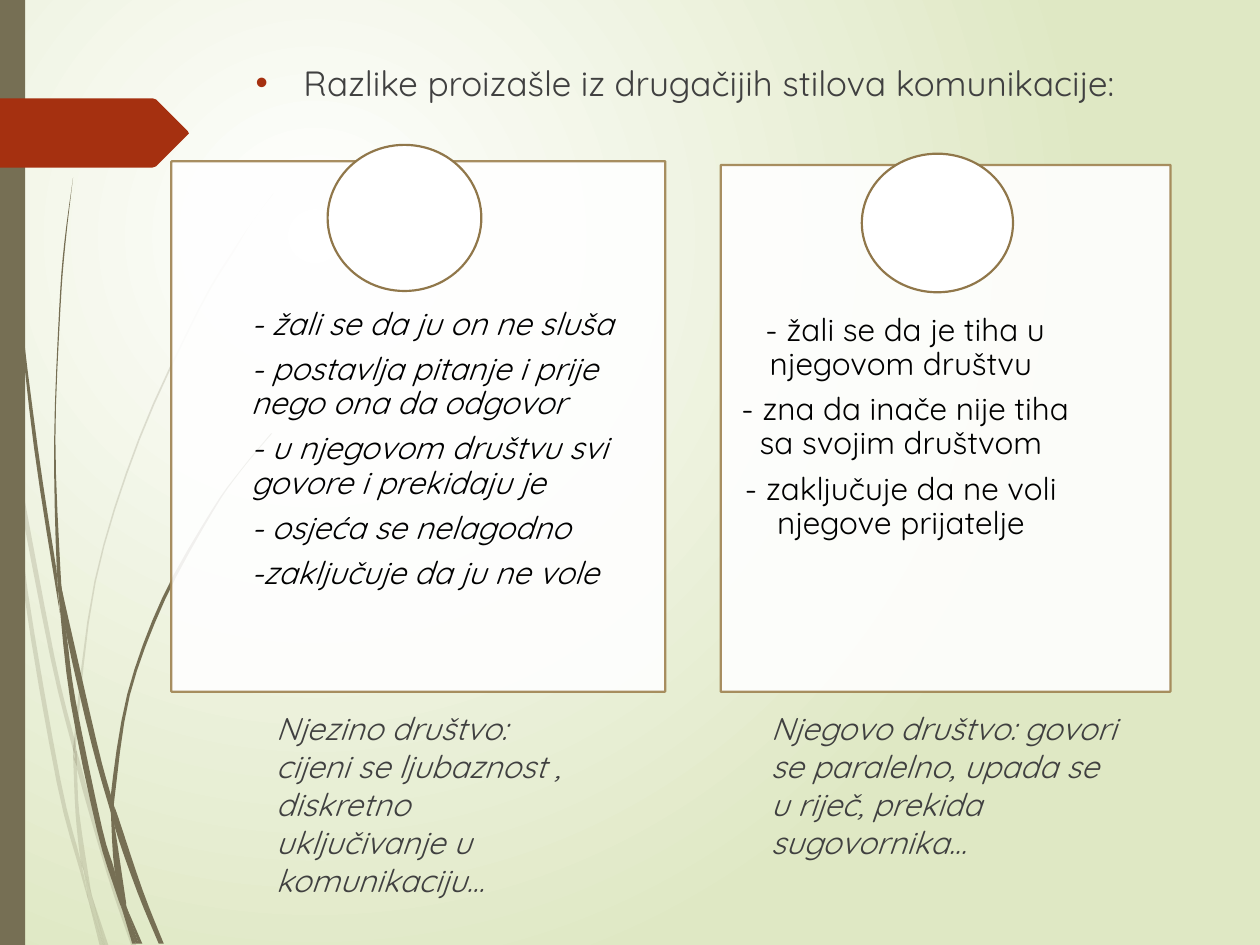
"""Build a slide that contrasts her and his complaints about communication styles."""
from dataclasses import dataclass
from typing import Optional

from lxml.etree import SubElement
from pptx import Presentation
from pptx.dml.color import RGBColor
from pptx.enum.shapes import MSO_SHAPE as Preset
from pptx.enum.text import MSO_ANCHOR as Anchor, MSO_AUTO_SIZE as AutoSize, PP_ALIGN as Align
from pptx.oxml import parse_xml
from pptx.oxml.ns import nsdecls, qn
from pptx.util import Inches, Pt

COLORS = {
    "white": "FFFFFF", "pale": "DFE8C4", "olive": "766F54", "red": "A53010",
    "frame": "9F8351", "ring": "90774A", "grey": "404040", "black": "000000",
}
FONT = "Quicksand"
STEPS = 4
Point = tuple[float, float]
Edge = list[Point]
Box = tuple[float, float, float, float]


@dataclass
class Wisp:
    """A blade of grass between two smooth edges, listed as one closed round."""
    outward: Edge
    back: Edge


@dataclass
class Card:
    """A framed list of complaints with a ring on its top side."""
    frame: Box
    ring: Box
    words: Box
    top_inset: float
    align: Align
    italic: bool
    complaints: list[str]


PALE_WISPS = [
    Wisp([(0.08, 3.5), (0.06, 3.22), (0, 2.82)], [(0, 2.99), (0.07, 3.44), (0.08, 3.5)]),
    Wisp([(0.1, 3.45), (0.12, 3.76), (0.4, 5.22), (0.59, 5.99)],
         [(0.59, 5.86), (0.43, 5.2), (0.1, 3.45)]),
    Wisp([(0.61, 5.96), (0.61, 6.1), (0.85, 6.94), (1.04, 7.5)],
         [(1.08, 7.5), (0.88, 6.92), (0.64, 6.07), (0.61, 5.96)]),
    Wisp([(0.83, 7.5), (0.86, 7.5)], [(0.73, 7.11), (0.83, 7.5)]),
    Wisp([(0.7, 7.14), (0.64, 6.83), (0.48, 6.19), (0.22, 4.69), (0.12, 3.76), (0.08, 3.5)],
         [(0.08, 3.5), (0.19, 4.7), (0.45, 6.21), (0.64, 6.93), (0.7, 7.14)]),
    Wisp([(0.58, 5.99), (0.6, 6.46), (0.64, 6.83), (0.67, 6.92), (0.73, 7.11)],
         [(0.72, 7.06), (0.63, 6.46), (0.61, 6.1), (0.58, 5.99)]),
    Wisp([(0.61, 5.96), (0.61, 5.84), (0.76, 4.62), (1.11, 3.49), (1.59, 2.45), (1.87, 1.98),
          (2.01, 1.75), (2.17, 1.54)],
         [(2.17, 1.53), (2.01, 1.75), (1.86, 1.97), (1.58, 2.44), (1.1, 3.48), (0.75, 4.61),
          (0.59, 5.84), (0.61, 5.96)]),
    Wisp([(0.7, 7.14), (0.79, 7.5)], [(0.82, 7.5), (0.7, 7.14)]),
    Wisp([(0.61, 6.08), (0.61, 5.96)], [(0.59, 5.86), (0.58, 5.99), (0.61, 6.08)]),
    Wisp([(0.65, 6.83), (0.69, 7.07), (0.7, 7.14), (0.82, 7.5)],
         [(0.83, 7.5), (0.73, 7.11), (0.67, 6.92), (0.65, 6.83)]),
]
DARK_WISPS = [
    Wisp([(0.02, 0), (0.03, 0.48), (0.05, 1.1), (0.14, 2.33), (0.27, 3.55), (0.46, 4.77),
          (0.47, 4.81)],
         [(0.45, 4.53), (0.3, 3.55), (0.15, 2.32), (0.06, 1.09), (0.04, 0.48), (0.03, 0)]),
    Wisp([(0.5, 4.72), (0.53, 5.05), (0.73, 5.92), (0.88, 6.45)],
         [(0.88, 6.31), (0.77, 5.9), (0.5, 4.72)]),
    Wisp([(0.91, 6.41), (0.91, 6.56), (1.09, 7.08), (1.26, 7.49)],
         [(1.3, 7.49), (1.13, 7.06), (0.94, 6.49), (0.91, 6.41)]),
    Wisp([(0.97, 7.22), (0.91, 6.91), (0.81, 6.57), (0.6, 5.56), (0.53, 5.05), (0.47, 4.77)],
         [(0.47, 4.77), (0.56, 5.57), (0.77, 6.59), (0.92, 7.08), (0.97, 7.22)]),
    Wisp([(0.5, 4.72), (0.48, 4.53), (0.44, 3.49), (0.48, 2.45), (0.52, 1.93), (0.58, 1.41)],
         [(0.58, 1.41), (0.51, 1.93), (0.47, 2.45), (0.43, 3.49), (0.45, 4.49), (0.49, 4.72)]),
    Wisp([(1.1, 7.49), (1.13, 7.49)], [(1, 7.19), (1.1, 7.49)]),
    Wisp([(0.45, 4.49), (0.47, 4.77), (0.53, 5.05)], [(0.5, 4.72), (0.45, 4.49)]),
    Wisp([(0.91, 6.41), (0.91, 6.33), (1.03, 5.52), (1.31, 4.76), (1.69, 4.06), (1.91, 3.74),
          (2.16, 3.44)],
         [(2.15, 3.44), (1.91, 3.73), (1.68, 4.05), (1.29, 4.74), (1.01, 5.51), (0.88, 6.31),
          (0.91, 6.41)]),
    Wisp([(0.97, 7.22), (1.05, 7.49)], [(1.08, 7.49), (0.97, 7.22)]),
    Wisp([(0.88, 6.45), (0.91, 6.91), (1, 7.19)], [(1, 7.16), (0.91, 6.56), (0.88, 6.45)]),
    Wisp([(0.88, 6.31), (0.88, 6.45), (0.91, 6.56)], [(0.91, 6.41), (0.88, 6.31)]),
    Wisp([(0.91, 6.91), (0.97, 7.22), (1.08, 7.49)], [(1.1, 7.49), (0.96, 7.06), (0.91, 6.91)]),
]
PAGE_FLAG = [(0, 0.78), (1.21, 0.78), (1.24, 0.79), (1.49, 1.04), (1.5, 1.06), (1.49, 1.07),
             (1.24, 1.32), (1.21, 1.33), (0, 1.33)]
CARDS = [
    Card((1.36, 1.28, 3.92, 4.21), (2.6, 1.15, 1.22, 1.16), (1.99, 1.28, 3.29, 4.21), 0.51,
         Align.LEFT, True,
         ["- žali se da ju on ne sluša", "- postavlja pitanje i prije nego ona da odgovor",
          "- u njegovom društvu svi govore i prekidaju je", "- osjeća se nelagodno",
          "-zaključuje da ju ne vole"]),
    Card((5.72, 1.31, 3.57, 4.18), (6.84, 1.22, 1.2, 1.1), (5.72, 1.31, 3, 4.18), 0.13,
         Align.CENTER, False,
         [" - žali se da je tiha u njegovom društvu",
          " - zna da inače nije tiha sa svojim društvom",
          "- zaključuje da ne voli njegove prijatelje"]),
]


def rgb(name: str) -> RGBColor:
    """Look up a colour of the palette."""
    return RGBColor.from_string(COLORS[name])


def inches(box: Box) -> list[Inches]:
    """Turn a box into lengths."""
    return [Inches(value) for value in box]


def smooth(edge: Edge) -> Edge:
    """Sample a Catmull-Rom curve through the points of an edge."""
    padded = [edge[0], *edge, edge[-1]]
    curve = [edge[0]]
    for a, b, c, d in zip(padded, padded[1:], padded[2:], padded[3:]):
        for step in range(1, STEPS + 1):
            t = step / STEPS
            curve.append(tuple(
                q + t / 2 * (r - p + t * (2 * p - 5 * q + 4 * r - s + t * (3 * q - p - 3 * r + s)))
                for p, q, r, s in zip(a, b, c, d)))
    return curve


def paint(shape, fill: str, line: Optional[str] = None, alpha: int = 100) -> None:
    """Give a shape a flat fill, an optional outline and an opacity in percent."""
    shape.shadow.inherit = False
    shape.fill.solid()
    shape.fill.fore_color.rgb = rgb(fill)
    if line:
        shape.line.color.rgb = rgb(line)
        shape.line.width = Pt(1.25)
    else:
        shape.line.fill.background()
    if alpha < 100:
        for color in shape.element.spPr.iter(qn("a:srgbClr")):
            SubElement(color, qn("a:alpha"), val=str(alpha * 1000))


def draw_outline(shapes, points: Edge, fill: str, alpha: int = 100) -> None:
    """Draw a closed outline."""
    corners = [(Inches(x), Inches(y)) for x, y in points]
    builder = shapes.build_freeform(*corners[0])
    builder.add_line_segments(corners[1:], close=True)
    paint(builder.convert_to_shape(), fill, alpha=alpha)


def draw_wisps(shapes, wisps: list[Wisp], alpha: int) -> None:
    """Draw a tuft of grass."""
    for wisp in wisps:
        draw_outline(shapes, smooth(wisp.outward) + smooth(wisp.back), "olive", alpha)


def draw_preset(shapes, preset: Preset, box: Box, fill: str,
                line: Optional[str] = None, alpha: int = 100) -> None:
    """Draw a preset shape."""
    paint(shapes.add_shape(preset, *inches(box)), fill, line, alpha)


def write(shape, texts: list[str], size: int, color: str, italic: bool = False,
          align: Align = Align.LEFT, anchor: Anchor = Anchor.TOP):
    """Write paragraphs into a shape and return its text frame."""
    frame = shape.text_frame
    frame.word_wrap = True
    frame.auto_size = AutoSize.NONE
    frame.vertical_anchor = anchor
    for index, text in enumerate(texts):
        paragraph = frame.add_paragraph() if index else frame.paragraphs[0]
        paragraph.alignment = align
        run = paragraph.add_run()
        run.text = text
        run.font.name, run.font.size, run.font.italic = FONT, Pt(size), italic
        run.font.color.rgb = rgb(color)
    return frame


def draw_card(shapes, card: Card) -> None:
    """Draw a frame, its complaints and its ring."""
    draw_preset(shapes, Preset.RECTANGLE, card.frame, "white", "frame", 90)
    frame = write(shapes.add_textbox(*inches(card.words)), card.complaints, 18, "black",
                  card.italic, card.align, Anchor.MIDDLE)
    frame.margin_left, frame.margin_top = 0, Inches(card.top_inset)
    frame.margin_right = frame.margin_bottom = Inches(0.14)
    for paragraph in frame.paragraphs:
        paragraph.line_spacing, paragraph.space_after = 0.9, Pt(6.3)
    draw_preset(shapes, Preset.OVAL, card.ring, "white", "ring")


def draw_background(slide) -> None:
    """Fill the background with a circular gradient."""
    fill = slide.background.fill
    fill.gradient()
    for stop, name in zip(fill.gradient_stops, ("white", "pale")):
        stop.color.rgb = rgb(name)
    linear = next(slide.element.iter(qn("a:lin")))
    linear.getparent().replace(linear, parse_xml(
        f'<a:path {nsdecls("a")} path="circle">'
        '<a:fillToRect l="50000" t="50000" r="100000" b="100000"/></a:path>'))


def draw_heading(shapes) -> None:
    """Write the bulleted heading."""
    heading = shapes.add_textbox(*inches((1.93, 0.44, 7.21, 1.5)))
    frame = write(heading, ["Razlike proizašle iz drugačijih stilova komunikacije:"], 20, "grey")
    properties = frame.paragraphs[0]._p.get_or_add_pPr()
    properties.set("marL", str(Inches(0.38)))
    properties.set("indent", str(Inches(-0.38)))
    SubElement(SubElement(properties, qn("a:buClr")), qn("a:srgbClr"), val=COLORS["red"])
    SubElement(properties, qn("a:buFont"), typeface="Arial")
    SubElement(properties, qn("a:buChar"), char="•")


def main() -> None:
    """Assemble and save the slide."""
    deck = Presentation()
    deck.slide_width, deck.slide_height = Inches(10), Inches(7.5)
    slide = deck.slides.add_slide(deck.slide_layouts[5])
    shapes = slide.shapes
    draw_background(slide)
    draw_wisps(shapes, PALE_WISPS, 20)
    draw_wisps(shapes, DARK_WISPS, 100)
    draw_preset(shapes, Preset.RECTANGLE, (0, 0, 0.2, 7.5), "olive")
    draw_outline(shapes, PAGE_FLAG, "red")
    draw_heading(shapes)
    for card in CARDS:
        draw_card(shapes, card)
    her_circle = shapes.title
    her_circle.left, her_circle.top, her_circle.width, her_circle.height = inches(
        (2.09, 5.58, 2.64, 1.32))
    write(her_circle, ["Njezino društvo: cijeni se ljubaznost , diskretno uključivanje u "
                       "komunikaciju…"], 18, "grey", True)
    write(shapes.add_textbox(*inches((6.02, 5.58, 2.99, 1.62))),
          ["Njegovo društvo: govori se paralelno, upada se u riječ, prekida sugovornika…"],
          18, "grey", True)
    deck.save("out.pptx")


if __name__ == "__main__":
    main()
